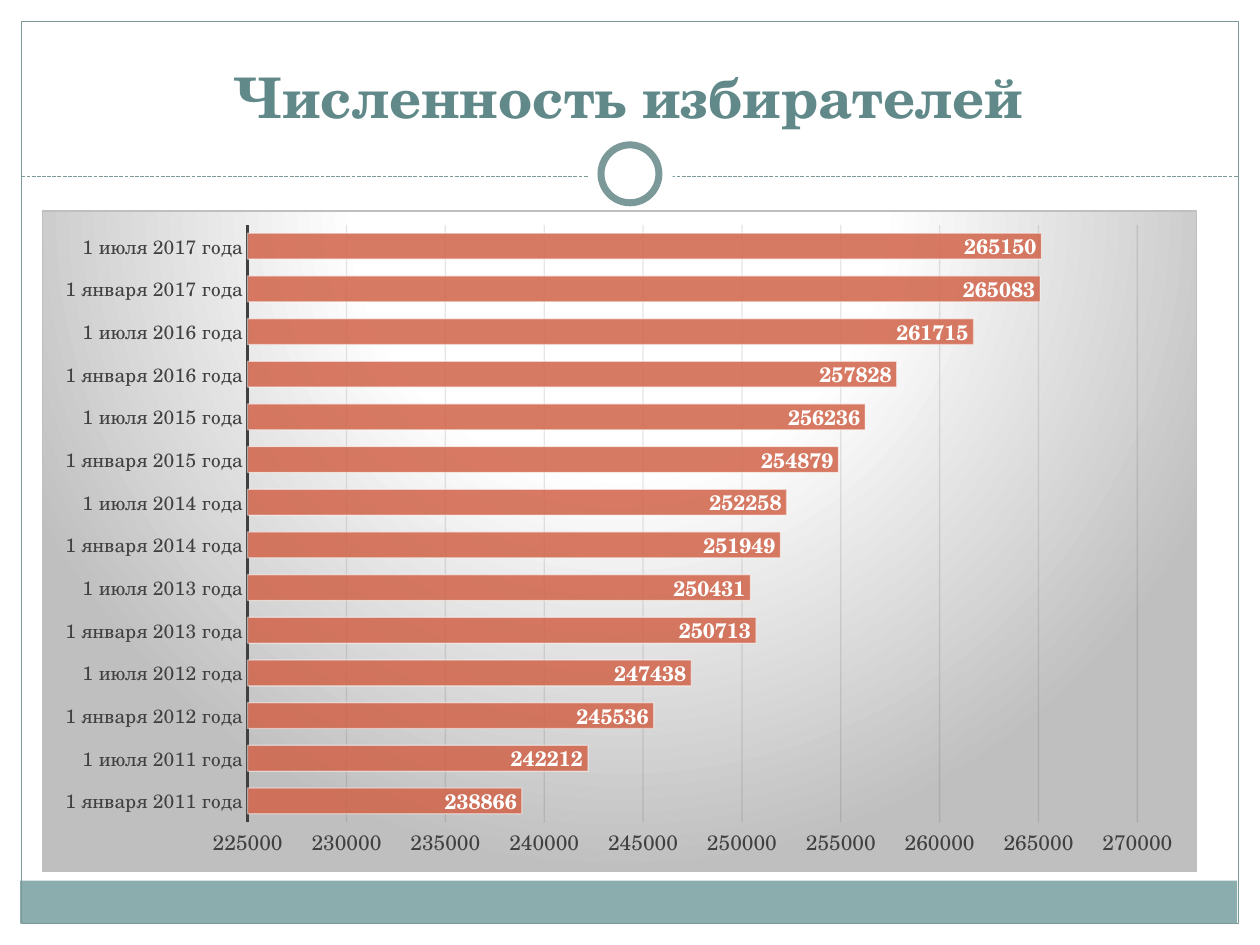
"""Builds a slide with a bar chart of the number of voters by date."""
from lxml import etree
from pptx import Presentation
from pptx import util as u
from pptx.chart import data
from pptx.dml.color import RGBColor
from pptx.enum import chart as ce, dml, shapes, text
from pptx.oxml import parse_xml
from pptx.oxml.ns import nsdecls, qn

FONT = "TeX Gyre Schola"
WHITE = RGBColor(0xFF, 0xFF, 0xFF)
TEAL = RGBColor(0x8C, 0xAD, 0xAE)
FRAME = RGBColor(0x7C, 0x99, 0x9A)
TITLE = RGBColor(0x61, 0x89, 0x8A)
BAR = RGBColor(0xD1, 0x63, 0x49)
DARK = RGBColor(0x40, 0x40, 0x40)
GRID = RGBColor(0x0D, 0x0D, 0x0D)

VOTERS = [238866, 242212, 245536, 247438, 250713, 250431, 251949,
          252258, 254879, 256236, 257828, 261715, 265083, 265150]
DATES = [f"1 {month} {year} года" for year in range(2011, 2018)
         for month in ("января", "июля")]

CHART_BACKGROUND = f"""<c:spPr {nsdecls("c", "a")}>
  <a:gradFill><a:gsLst>
    <a:gs pos="0"><a:srgbClr val="FFFFFF"/></a:gs>
    <a:gs pos="39000"><a:srgbClr val="FFFFFF"/></a:gs>
    <a:gs pos="100000"><a:srgbClr val="BFBFBF"/></a:gs>
  </a:gsLst><a:path path="circle">
    <a:fillToRect l="50000" t="-80000" r="50000" b="180000"/>
  </a:path></a:gradFill>
  <a:ln w="9525"><a:solidFill><a:srgbClr val="BFBFBF"/></a:solidFill></a:ln>
</c:spPr>"""


def inches(*lengths):
    return [u.Inches(length) for length in lengths]


def style_font(font, size, color, bold=False):
    font.name, font.size, font.bold = FONT, u.Pt(size), bold
    font.color.rgb = color


def style_line(line, color, width):
    line.color.rgb = color
    line.width = u.Pt(width)


def add_panel(page, at, fill=None, line=None, width=0.75,
              kind=shapes.MSO_SHAPE.RECTANGLE):
    panel = page.shapes.add_shape(kind, *inches(*at))
    panel.shadow.inherit = False
    if fill is None:
        panel.fill.background()
    else:
        panel.fill.solid()
        panel.fill.fore_color.rgb = fill
    if line is None:
        panel.line.fill.background()
    else:
        style_line(panel.line, line, width)


def add_dashed_line(page, left, right, top):
    rule = page.shapes.add_connector(
        shapes.MSO_CONNECTOR.STRAIGHT, *inches(left, top, right, top))
    style_line(rule.line, FRAME, 0.75)
    rule.line.dash_style = dml.MSO_LINE.SQUARE_DOT
    properties = rule.element.find(qn("p:spPr"))
    etree.SubElement(properties, qn("a:effectLst"))


def add_text(page, at, words, size, color, bold=False,
             align=text.PP_ALIGN.CENTER, anchor=text.MSO_ANCHOR.BOTTOM):
    frame = page.shapes.add_textbox(*inches(*at)).text_frame
    frame.word_wrap = True
    frame.vertical_anchor = anchor
    para = frame.paragraphs[0]
    para.alignment = align
    span = para.add_run()
    span.text = words
    style_font(span.font, size, color, bold)


def set_alpha(chart, query, percent):
    for color in chart.element.xpath(query + "//a:srgbClr"):
        etree.SubElement(color, qn("a:alpha"), val=str(percent * 1000))


def set_plot_layout(chart, **fractions):
    area = chart.element.xpath(".//c:plotArea")[0]
    for old in area.findall(qn("c:layout")):
        area.remove(old)
    layout = etree.Element(qn("c:layout"))
    manual = etree.SubElement(layout, qn("c:manualLayout"))
    settings = {"layoutTarget": "inner", "xMode": "edge", "yMode": "edge"}
    for name, value in (settings | fractions).items():
        etree.SubElement(manual, qn("c:" + name), val=str(value))
    area.insert(0, layout)


def style_axes(chart):
    dates, values = chart.category_axis, chart.value_axis
    for axis, size in ((dates, 11), (values, 12)):
        axis.major_tick_mark = axis.minor_tick_mark = ce.XL_TICK_MARK.NONE
        style_font(axis.tick_labels.font, size, DARK)
    style_line(dates.format.line, DARK, 1.5)
    values.format.line.fill.background()
    values.minimum_scale, values.maximum_scale = 225000, 270000
    values.major_unit = 5000
    values.tick_labels.number_format = "0"
    values.tick_labels.number_format_is_linked = False
    style_line(values.major_gridlines.format.line, GRID, 0.75)
    set_alpha(chart, ".//c:majorGridlines", 10)


def style_bars(chart):
    plot = chart.plots[0]
    plot.gap_width = 65
    plot.vary_by_categories = False
    series = plot.series[0]
    series.format.fill.solid()
    series.format.fill.fore_color.rgb = BAR
    style_line(series.format.line, WHITE, 0.75)
    set_alpha(chart, ".//c:ser/c:spPr/a:solidFill", 85)
    set_alpha(chart, ".//c:ser/c:spPr/a:ln", 50)
    labels = series.data_labels
    labels.show_value = True
    labels.position = ce.XL_LABEL_POSITION.INSIDE_END
    style_font(labels.font, 12, WHITE, bold=True)


def add_voter_chart(page, at):
    source = data.CategoryChartData(number_format="0")
    source.categories = DATES
    source.add_series("Численность", VOTERS)
    chart = page.shapes.add_chart(
        ce.XL_CHART_TYPE.BAR_CLUSTERED, *inches(*at), source).chart
    chart.has_legend = chart.has_title = False
    style_font(chart.font, 10, RGBColor(0, 0, 0))
    style_axes(chart)
    style_bars(chart)
    set_plot_layout(chart, x=0.178, y=0.021, w=0.771, h=0.905)
    chart.element.find(qn("c:chart")).addnext(parse_xml(CHART_BACKGROUND))


def main():
    deck = Presentation()
    deck.slide_width, deck.slide_height = inches(10, 7.5)
    page = deck.slides.add_slide(deck.slide_layouts[6])
    for at in ((0, 0, 10, 1.52), (0, 0, 0.17, 7.5), (9.83, 0, 0.17, 7.5)):
        add_panel(page, at, fill=WHITE)
    add_panel(page, (0.16, 6.99, 9.66, 0.34), fill=TEAL)
    add_panel(page, (0.17, 0.17, 9.66, 7.16), line=FRAME)
    add_dashed_line(page, 0.17, 9.83, 1.4)
    oval = shapes.MSO_SHAPE.OVAL
    add_panel(page, (4.67, 1.05, 0.67, 0.67), fill=WHITE, kind=oval)
    add_panel(page, (4.77, 1.15, 0.46, 0.46), WHITE, FRAME, 4, oval)
    add_text(page, (0.33, 0.25, 9.33, 0.83), "Численность избирателей",
             size=32, color=TITLE, bold=True)
    add_voter_chart(page, (0.33, 1.67, 9.17, 5.25))
    deck.save("out.pptx")


if __name__ == "__main__":
    main()
